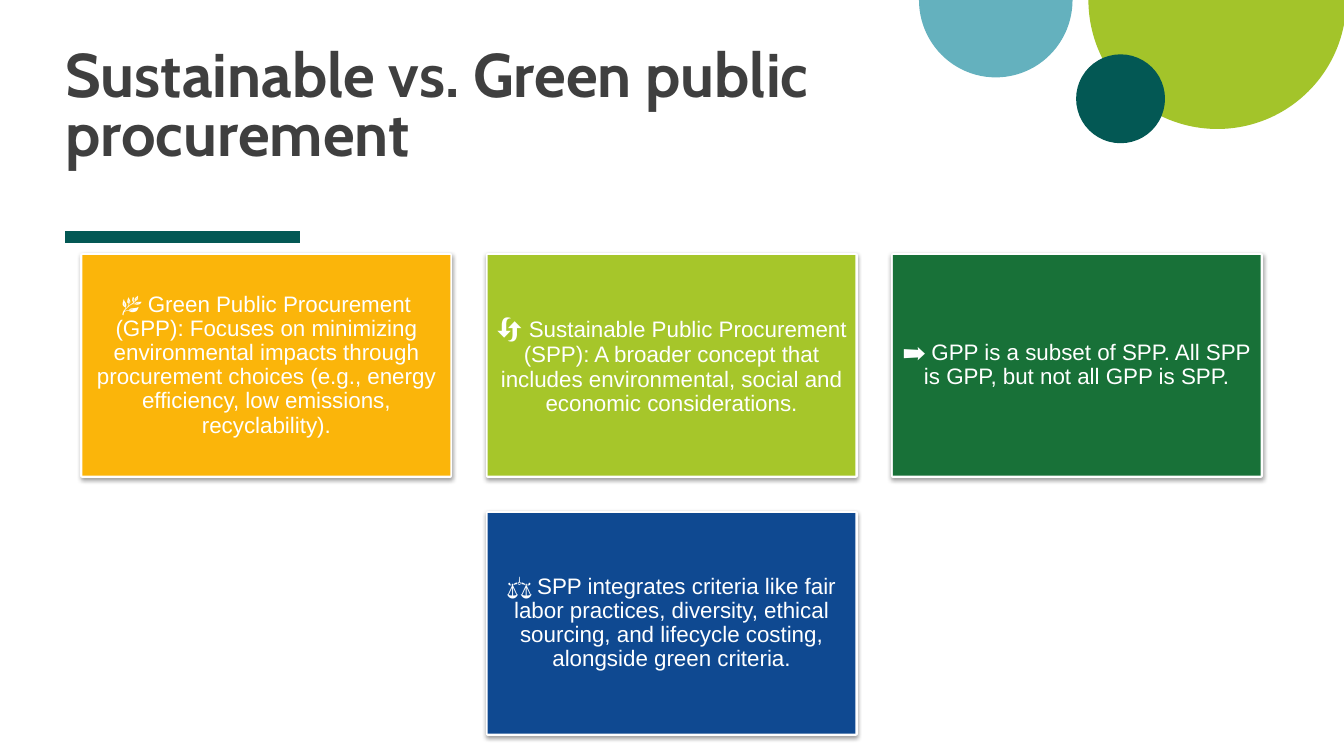
from dataclasses import dataclass

from lxml import etree
from pptx import Presentation
from pptx.dml.color import RGBColor
from pptx.enum.shapes import MSO_CONNECTOR, MSO_SHAPE
from pptx.enum.text import MSO_ANCHOR, MSO_AUTO_SIZE, PP_ALIGN
from pptx.oxml import parse_xml
from pptx.oxml.ns import nsdecls, qn
from pptx.util import Cm, Pt

RECTANGLE, OVAL, PIE = MSO_SHAPE.RECTANGLE, MSO_SHAPE.OVAL, MSO_SHAPE.CHORD
PIE = MSO_SHAPE.PIE
STRAIGHT = MSO_CONNECTOR.STRAIGHT
MIDDLE = MSO_ANCHOR.MIDDLE
LEFT, CENTER = PP_ALIGN.LEFT, PP_ALIGN.CENTER
NO_FIT = MSO_AUTO_SIZE.NONE


@dataclass(frozen=True)
class Theme:
    ink: str = "3F3F3F"
    white: str = "FFFFFF"
    shadow: str = "000000"
    teal: str = "035854"
    lime: str = "A3C42A"
    aqua: str = "64B1BE"
    amber: str = "FBB50A"
    leaf: str = "A6C62A"
    forest: str = "187138"
    navy: str = "0F4991"
    title_font: str = "Cabin"
    body_font: str = "Arial"
    icon_font: str = "Karla"
    title_size: int = 44
    body_size: int = 16
    large_icon_size: int = 19


class SlideBuilder:
    def __init__(self, page, theme):
        self.page = page
        self.theme = theme

    def span(self, para, text, font, size, color, bold=False):
        span = para.add_run()
        span.text = text
        span.font.name = font
        span.font.size = Pt(size)
        span.font.bold = bold
        span.font.color.rgb = RGBColor.from_string(color)

    def paragraph(self, box, align, spacing, inset):
        frame = box.text_frame
        frame.word_wrap = True
        frame.auto_size = NO_FIT
        frame.vertical_anchor = MIDDLE
        frame.margin_left = frame.margin_right = Cm(inset)
        frame.margin_top = frame.margin_bottom = Cm(inset)
        para = frame.paragraphs[0]
        para.alignment = align
        para.line_spacing = spacing
        para.space_before = Pt(0)
        return para

    def title(self, text, left, top, width, height):
        box = self.page.shapes.title
        box.left, box.top, box.width, box.height = map(Cm, (left, top, width, height))
        para = self.paragraph(box, LEFT, 0.8, 0)
        theme = self.theme
        self.span(para, text, theme.title_font, theme.title_size, theme.ink, True)

    def shape(self, kind, left, top, width, height, color):
        box = self.page.shapes.add_shape(kind, *map(Cm, (left, top, width, height)))
        box.shadow.inherit = False
        box.fill.solid()
        box.fill.fore_color.rgb = RGBColor.from_string(color)
        box.line.fill.background()
        return box

    def half_disc(self, left, top, width, height, color):
        disc = self.shape(PIE, left, top, width, height, color)
        disc.adjustments[0] = 0
        disc.adjustments[1] = 108

    def rule(self, left, top, width, color, weight):
        line = self.page.shapes.add_connector(
            STRAIGHT, Cm(left), Cm(top), Cm(left + width), Cm(top))
        line.line.color.rgb = RGBColor.from_string(color)
        line.line.width = Pt(weight)
        etree.SubElement(line._element.spPr, qn("a:effectLst"))

    def drop_shadow(self, box):
        effects = box._element.spPr.find(qn("a:effectLst"))
        effects.append(parse_xml(
            f'<a:outerShdw {nsdecls("a")} blurRad="{Pt(3.1)}" dist="{Pt(1.6)}" '
            f'dir="5400000" rotWithShape="0"><a:srgbClr val="{self.theme.shadow}">'
            '<a:alpha val="37000"/></a:srgbClr></a:outerShdw>'))

    def card(self, left, top, width, height, color, icon, icon_size, text):
        theme = self.theme
        border = self.shape(RECTANGLE, left, top, width, height, color)
        border.line.color.rgb = RGBColor.from_string(theme.white)
        border.line.width = Pt(3)
        self.drop_shadow(border)
        panel = self.shape(RECTANGLE, left, top, width, height, color)
        para = self.paragraph(panel, CENTER, 0.9, 0.2)
        self.span(para, icon + " ", theme.icon_font, icon_size, theme.white)
        self.span(para, text, theme.body_font, theme.body_size, theme.white)


def main():
    theme = Theme()
    deck = Presentation()
    deck.slide_width, deck.slide_height = Cm(33.87), Cm(19.05)
    title_only = deck.slide_layouts[5]
    builder = SlideBuilder(deck.slides.add_slide(title_only), theme)

    builder.rule(1.65, 5.97, 5.92, theme.teal, 8)
    builder.half_disc(27.43, -3.25, 6.5, 6.5, theme.lime)
    builder.half_disc(23.16, -1.95, 3.87, 3.9, theme.aqua)
    builder.shape(OVAL, 27.12, 1.37, 2.24, 2.24, theme.teal)
    builder.title("Sustainable vs. Green public procurement", 1.65, 0.56, 23.57, 4.37)

    cards = [
        (0, 0, theme.amber, "🌿", theme.body_size,
         "Green Public Procurement (GPP): Focuses on minimizing environmental impacts "
         "through procurement choices (e.g., energy efficiency, low emissions, "
         "recyclability)."),
        (1, 0, theme.leaf, "🔄", theme.large_icon_size,
         "Sustainable Public Procurement (SPP): A broader concept that includes "
         "environmental, social and economic considerations."),
        (2, 0, theme.forest, "➡️", theme.body_size,
         "GPP is a subset of SPP. All SPP is GPP, but not all GPP is SPP."),
        (1, 1, theme.navy, "⚖️", theme.body_size,
         "SPP integrates criteria like fair labor practices, diversity, ethical "
         "sourcing, and lifecycle costing, alongside green criteria."),
    ]
    width, height, gap = 9.27, 5.56, 0.94
    for column, row, color, icon, icon_size, text in cards:
        left = 2.08 + column * (width + gap)
        top = 6.43 + row * (height + gap)
        builder.card(left, top, width, height, color, icon, icon_size, text)

    deck.save("out.pptx")


if __name__ == "__main__":
    main()
